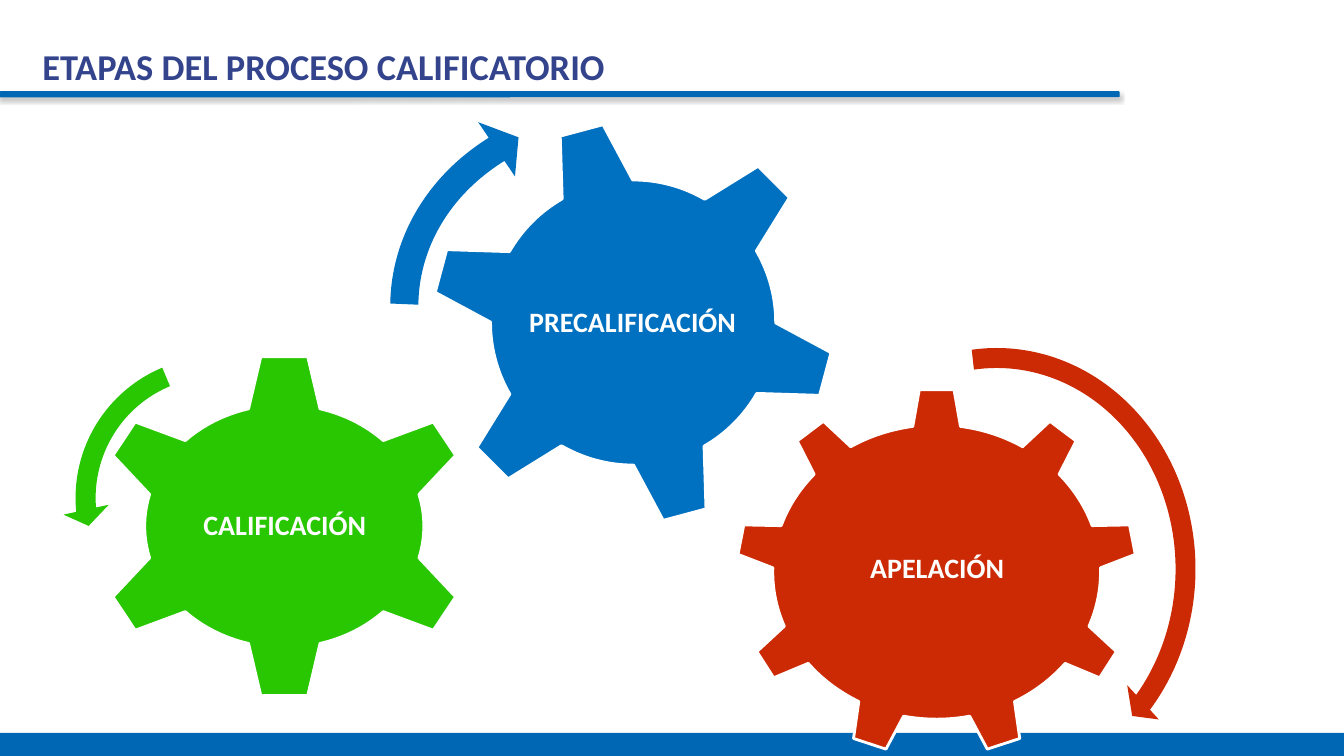
from dataclasses import dataclass

from lxml import etree
from pptx import Presentation
from pptx import util as u
from pptx.dml.color import RGBColor
from pptx.enum import shapes, text
from pptx.oxml import ns

BAR_BLUE = RGBColor(0x00, 0x67, 0xB4)
TITLE_BLUE = RGBColor(0x33, 0x44, 0x8D)
GEAR_BLUE = RGBColor(0x00, 0x70, 0xC0)
GREEN = RGBColor(0x29, 0xC6, 0x02)
RED = RGBColor(0xCC, 0x2A, 0x04)
WHITE = RGBColor(0xFF, 0xFF, 0xFF)

Shape = shapes.MSO_SHAPE
Box = tuple[float, float, float, float]


@dataclass(frozen=True)
class Gear:
    label: str
    kind: Shape
    color: RGBColor
    box: Box
    label_box: Box
    rotation: float = 0


@dataclass(frozen=True)
class TurnArrow:
    kind: Shape
    color: RGBColor
    box: Box
    adjustments: tuple[float, ...]
    rotation: float = 0


GEARS = (
    Gear("APELACIÓN", Shape.GEAR_9, RED,
         (7.3, 3.85, 3.98, 3.65), (8.08, 4.71, 2.43, 1.88)),
    Gear("CALIFICACIÓN", Shape.GEAR_6, GREEN,
         (0.92, 3.5, 3.8, 3.44), (1.84, 4.37, 1.97, 1.7)),
    Gear("PRECALIFICACIÓN", Shape.GEAR_6, GEAR_BLUE,
         (4.26, 1.18, 4.04, 4.04), (5.14, 2.07, 2.27, 2.27), 345),
)
# Arrow adjustments: thickness, head angle, end angle, start angle, head width
ARROWS = (
    TurnArrow(Shape.CIRCULAR_ARROW, RED, (7.78, 3.32, 4.21, 4.65),
              (0.047, 2.99, 25.4, 158.108, 0.055)),
    TurnArrow(Shape.LEFT_CIRCULAR_ARROW, GREEN, (0.62, 3.41, 3.06, 3.06),
              (0.065, 4.3, 104.891, 148.378, 0.075)),
    TurnArrow(Shape.CIRCULAR_ARROW, GEAR_BLUE, (3.68, 0.8, 5.31, 4.64),
              (0.06, 3.941, 133.138, 105.082, 0.07), 7.4),
)


def inches(box: Box) -> list[u.Length]:
    return [u.Inches(value) for value in box]


def apply(target, values: dict) -> None:
    """Set every attribute named in values on target."""
    for name, value in values.items():
        setattr(target, name, value)


def add_filled(slide, kind: Shape, box: Box, color: RGBColor, rotation: float = 0):
    """Add a flat shape without outline or shadow."""
    shape = slide.shapes.add_shape(kind, *inches(box))
    shape.shadow.inherit = False
    shape.fill.solid()
    shape.fill.fore_color.rgb = color
    shape.line.fill.background()
    shape.rotation = rotation
    return shape


def set_line(shape, color: RGBColor, width: float) -> None:
    shape.line.color.rgb = color
    shape.line.width = u.Pt(width)


def add_drop_shadow(shape) -> None:
    effects = shape._element.spPr.find(ns.qn("a:effectLst"))
    shadow = etree.SubElement(effects, ns.qn("a:outerShdw"), blurRad="40000",
                              dist="23000", dir="5400000", rotWithShape="0")
    color = etree.SubElement(shadow, ns.qn("a:srgbClr"), val="000000")
    etree.SubElement(color, ns.qn("a:alpha"), val="35000")


def write(shape, content: str, size: float, color: RGBColor, align, margin: float) -> None:
    """Fill a text shape with one bold, vertically centred line."""
    frame = shape.text_frame
    frame.text = content
    apply(frame, {
        "word_wrap": True,
        "auto_size": text.MSO_AUTO_SIZE.NONE,
        "vertical_anchor": text.MSO_ANCHOR.MIDDLE,
        **{f"margin_{side}": u.Inches(margin)
           for side in ("left", "top", "right", "bottom")},
    })
    paragraph = frame.paragraphs[0]
    paragraph.alignment = align
    font = paragraph.runs[0].font
    apply(font, {"name": "Calibri", "size": u.Pt(size), "bold": True})
    font.color.rgb = color


def add_bars(slide) -> None:
    rule = add_filled(slide, Shape.ROUNDED_RECTANGLE, (0, 0.91, 11.1, 0.05), BAR_BLUE)
    rule.adjustments[0] = 0.12
    set_line(rule, BAR_BLUE, 0.75)
    add_drop_shadow(rule)
    add_filled(slide, Shape.RECTANGLE, (0, 7.27, 13.33, 0.23), BAR_BLUE)


def add_title(slide) -> None:
    title = slide.shapes.title
    apply(title, dict(zip(("left", "top", "width", "height"),
                          inches((0.42, 0.43, 12.67, 0.44)))))
    write(title, "ETAPAS DEL PROCESO CALIFICATORIO", 26, TITLE_BLUE,
          text.PP_ALIGN.LEFT, 0)


def add_gear(slide, gear: Gear) -> None:
    shape = add_filled(slide, gear.kind, gear.box, gear.color, gear.rotation)
    set_line(shape, WHITE, 2)
    label = slide.shapes.add_textbox(*inches(gear.label_box))
    write(label, gear.label, 20, WHITE, text.PP_ALIGN.CENTER, 0.03)
    label.text_frame.paragraphs[0].line_spacing = 0.9


def add_turn_arrow(slide, arrow: TurnArrow) -> None:
    shape = add_filled(slide, arrow.kind, arrow.box, arrow.color, arrow.rotation)
    for index, value in enumerate(arrow.adjustments):
        shape.adjustments[index] = value


def main() -> None:
    presentation = Presentation()
    apply(presentation, {"slide_width": u.Inches(13.33), "slide_height": u.Inches(7.5)})
    slide = presentation.slides.add_slide(presentation.slide_layouts[5])
    add_bars(slide)
    add_title(slide)
    for gear in GEARS:
        add_gear(slide, gear)
    for arrow in ARROWS:
        add_turn_arrow(slide, arrow)
    presentation.save("out.pptx")


if __name__ == "__main__":
    main()
